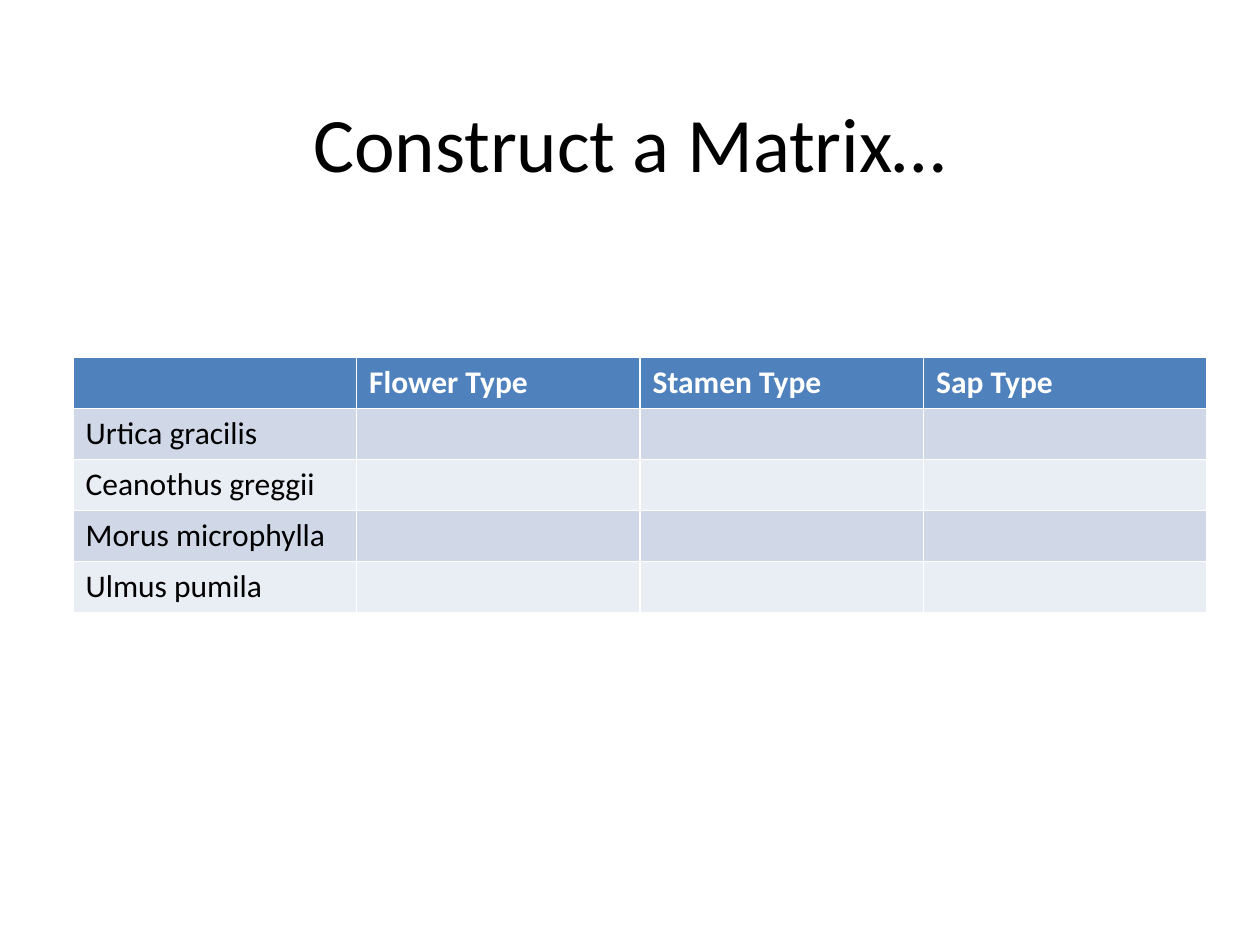
from dataclasses import dataclass

from pptx import Presentation
from pptx.dml.color import RGBColor
from pptx.enum.text import MSO_ANCHOR, PP_ALIGN
from pptx.util import Inches, Pt

MIDDLE = MSO_ANCHOR.MIDDLE
CENTER = PP_ALIGN.CENTER


@dataclass(frozen=True)
class Theme:
    """Colours, font and type sizes of the slide."""
    font: str = "Calibri"
    ink: str = "000000"
    light: str = "FFFFFF"
    head: str = "4F81BD"
    bands: tuple = ("D0D8E8", "E9EDF4")
    title: int = 44
    body: int = 18


THEME = Theme()
WIDE, HIGH = Inches(10), Inches(7.5)
TRAITS = ["Flower Type", "Stamen Type", "Sap Type"]
PLANTS = ["Urtica gracilis", "Ceanothus greggii", "Morus microphylla", "Ulmus pumila"]


def share(left, top, width, height):
    """Turn shares of the slide into a box."""
    return int(left * WIDE), int(top * HIGH), int(width * WIDE), int(height * HIGH)


def style(para, size, color, bold=False):
    """Set the font of a paragraph."""
    font = para.font
    font.name, font.size, font.bold = THEME.font, Pt(size), bold
    font.color.rgb = RGBColor.from_string(color)


def add_title(slide, box, text):
    """Fill the title placeholder and fit it to the box."""
    title = slide.shapes.title
    title.left, title.top, title.width, title.height = box
    frame = title.text_frame
    frame.text, frame.vertical_anchor = text, MIDDLE
    para = frame.paragraphs[0]
    para.alignment = CENTER
    style(para, THEME.title, THEME.ink)


def add_matrix(slide, box, traits, plants):
    """Place a table of plants by traits with blank cells to fill in."""
    rows = [["", *traits]] + [[name] + [""] * len(traits) for name in plants]
    table = slide.shapes.add_table(len(rows), len(rows[0]), *box).table
    for i, row in enumerate(rows):
        top = i == 0
        fill = THEME.head if top else THEME.bands[(i - 1) % 2]
        for j, text in enumerate(row):
            cell = table.cell(i, j)
            cell.text = text
            cell.fill.solid()
            cell.fill.fore_color.rgb = RGBColor.from_string(fill)
            style(cell.text_frame.paragraphs[0], THEME.body,
                  THEME.light if top else THEME.ink, top)


def main():
    """Build and save the slide."""
    deck = Presentation()
    deck.slide_width, deck.slide_height = WIDE, HIGH
    slide = deck.slides.add_slide(deck.slide_layouts[5])
    add_title(slide, share(0.05, 1 / 15, 0.9, 1 / 6), "Construct a Matrix…")
    add_matrix(slide, share(0.058, 0.378, 0.9, 0.27), TRAITS, PLANTS)
    deck.save("out.pptx")


if __name__ == "__main__":
    main()
